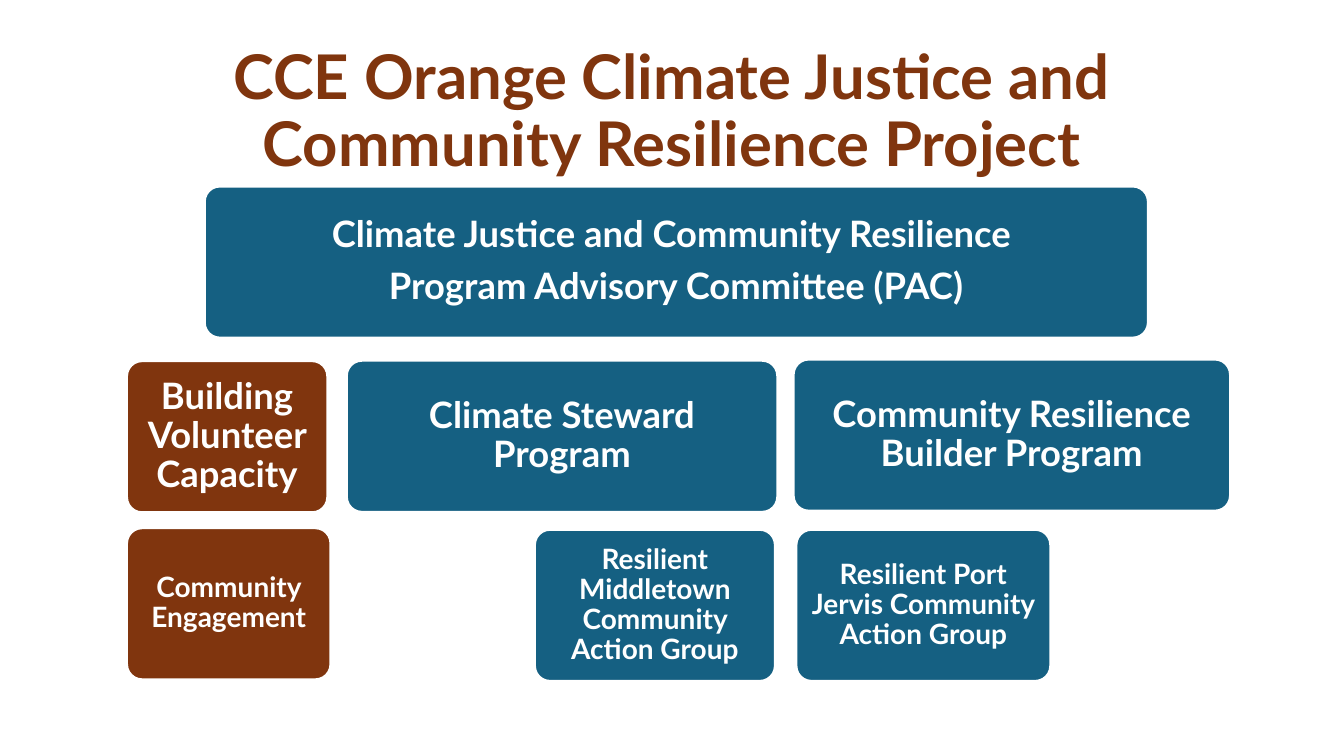
import pptx
import pptx.util
import pptx.dml.color
import pptx.enum.shapes
import pptx.enum.text

Cm = pptx.util.Cm
Pt = pptx.util.Pt
BLUE = pptx.dml.color.RGBColor(0x15, 0x60, 0x82)
BROWN = pptx.dml.color.RGBColor(0x80, 0x35, 0x0E)
WHITE = pptx.dml.color.RGBColor(0xFF, 0xFF, 0xFF)

FONT = "Lato"
LARGE, SMALL = 26, 20
INSETS = {LARGE: 0.28, SMALL: 0.2}
BOX_HEIGHT = 3.81
CORNER = 0.1

TITLE = "CCE Orange Climate Justice and Community Resilience Project"
BOXES = [
    (["Climate Justice and Community Resilience ", "Program Advisory Committee (PAC)"],
     5.16, 4.7, 23.77, BLUE, LARGE),
    (["Building Volunteer Capacity"], 3.2, 9.1, 5.05, BROWN, LARGE),
    (["Climate Steward Program"], 8.74, 9.09, 10.85, BLUE, LARGE),
    (["Community Resilience Builder Program"], 20, 9.06, 11, BLUE, LARGE),
    (["Community Engagement"], 3.2, 13.31, 5.13, BROWN, SMALL),
    (["Resilient Middletown Community Action Group"], 13.48, 13.35, 6.05, BLUE, SMALL),
    (["Resilient Port Jervis Community Action Group"], 20.07, 13.35, 6.4, BLUE, SMALL),
]


def write_text(shape, lines, size, color, inset):
    frame = shape.text_frame
    frame.word_wrap = True
    frame.vertical_anchor = pptx.enum.text.MSO_ANCHOR.MIDDLE
    frame.margin_left = frame.margin_right = Cm(inset)
    frame.margin_top = frame.margin_bottom = Cm(inset)
    frame.text = "\n".join(lines)
    for paragraph in frame.paragraphs:
        paragraph.alignment = pptx.enum.text.PP_ALIGN.CENTER
        paragraph.line_spacing = 0.9
        paragraph.font.name = FONT
        paragraph.font.size = Pt(size)
        paragraph.font.bold = True
        paragraph.font.color.rgb = color
    for paragraph in frame.paragraphs[:-1]:
        paragraph.space_after = Pt(size * 0.35)


def add_box(slide, lines, left, top, width, fill, size):
    shape = slide.shapes.add_shape(
        pptx.enum.shapes.MSO_SHAPE.ROUNDED_RECTANGLE,
        Cm(left), Cm(top), Cm(width), Cm(BOX_HEIGHT))
    shape.adjustments[0] = CORNER
    shape.shadow.inherit = False
    shape.fill.solid()
    shape.fill.fore_color.rgb = fill
    shape.line.color.rgb = WHITE
    shape.line.width = Pt(1.5)
    write_text(shape, lines, size, WHITE, INSETS[size])


def main():
    presentation = pptx.Presentation()
    presentation.slide_width = Cm(33.87)
    presentation.slide_height = Cm(19.05)
    slide = presentation.slides.add_slide(presentation.slide_layouts[6])
    title = slide.shapes.add_textbox(Cm(2.33), Cm(1.01), Cm(29.21), Cm(3.68))
    write_text(title, [TITLE], 44, BROWN, 0.2)
    for box in BOXES:
        add_box(slide, *box)
    presentation.save("out.pptx")


if __name__ == "__main__":
    main()
